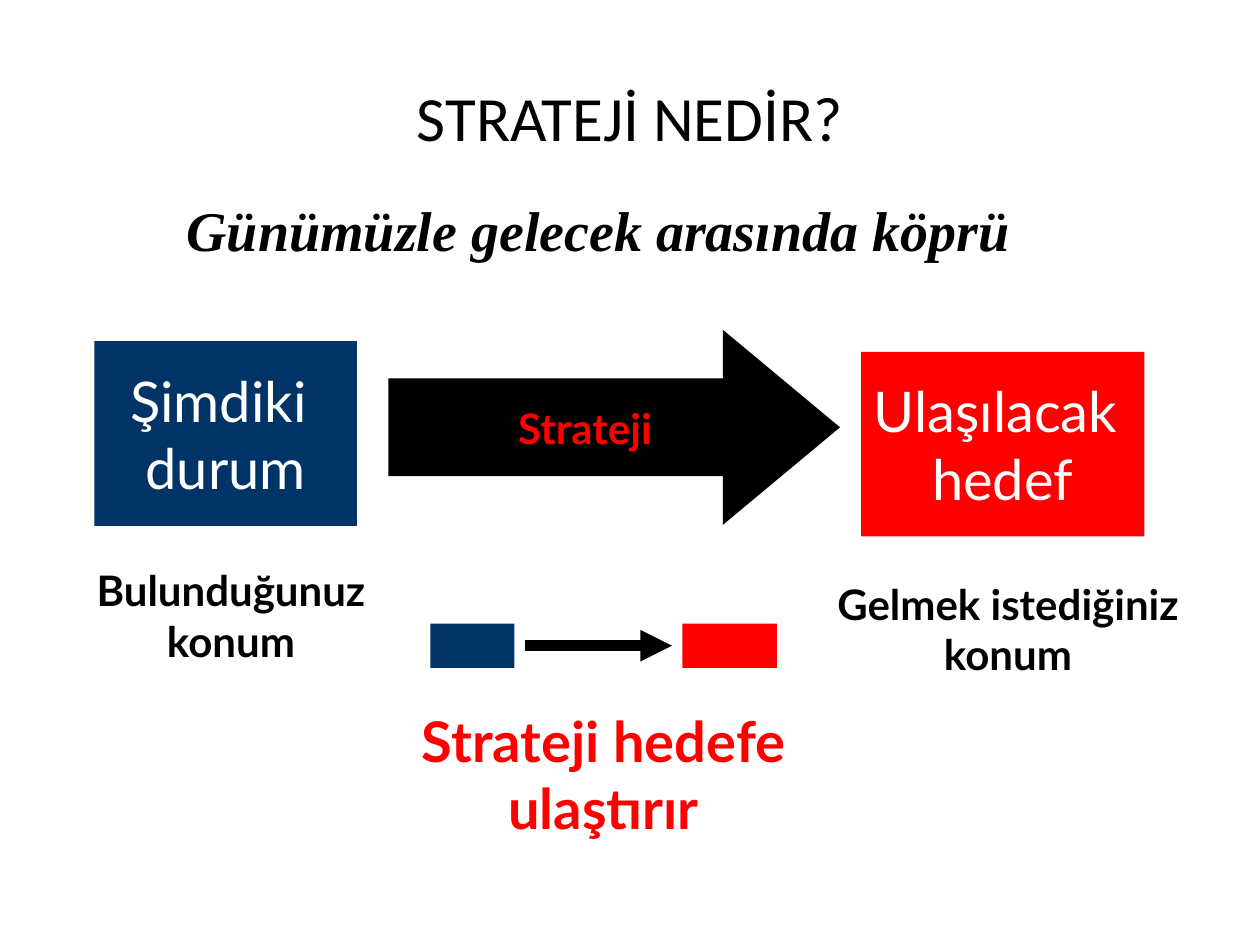
from dataclasses import dataclass

from lxml import etree
from pptx import Presentation
from pptx.dml.color import RGBColor
from pptx.enum.shapes import MSO_CONNECTOR, MSO_SHAPE
from pptx.enum.text import MSO_ANCHOR, PP_ALIGN
from pptx.oxml.ns import qn
from pptx.util import Emu, Inches, Pt

CENTER = PP_ALIGN.CENTER
TOP, MIDDLE = MSO_ANCHOR.TOP, MSO_ANCHOR.MIDDLE
RECTANGLE, RIGHT_ARROW = MSO_SHAPE.RECTANGLE, MSO_SHAPE.RIGHT_ARROW
STRAIGHT = MSO_CONNECTOR.STRAIGHT
WIDTH, HEIGHT = Inches(10), Inches(7.5)
COLUMNS = 120  # square grid cells, 12 to the inch
COLORS = {"ink": "000000", "paper": "FFFFFF", "now": "003366", "goal": "FF0000"}


@dataclass(frozen=True)
class Place:
    """Left, top, width and height in grid cells."""
    left: float
    top: float
    width: float
    height: float


@dataclass(frozen=True)
class Style:
    size: int
    color: str
    font: str = "Lato"
    bold: bool = False
    italic: bool = False


@dataclass(frozen=True)
class Label:
    place: Place
    text: str
    style: Style


@dataclass(frozen=True)
class Block:
    place: Place
    fill: str
    lines: tuple[str, ...] = ()
    style: Style | None = None
    preset: int = RECTANGLE


TITLE = Style(36, "ink", "Calibri")
SUBTITLE = Style(32, "ink", "Times New Roman", bold=True, italic=True)
CAPTION = Style(24, "ink", bold=True)
CONCLUSION = Style(32, "goal", bold=True)
STATE = Style(32, "paper")
STRATEGY = Style(24, "goal", bold=True)

LABELS = (
    Label(Place(6, 18, 102, 63.7), "Günümüzle gelecek arasında köprü", SUBTITLE),
    Label(Place(77, 54.5, 38, 10.8), "Gelmek istediğiniz konum", CAPTION),
    Label(Place(33, 66.7, 49, 14), "Strateji hedefe ulaştırır", CONCLUSION),
    Label(Place(7, 53.2, 30, 10.8), "Bulunduğunuz konum", CAPTION),
)
BLOCKS = (
    Block(Place(9, 32.5, 25, 17.6), "now", ("Şimdiki ", "durum"), STATE),
    Block(Place(82, 33.5, 27, 17.6), "goal", ("Ulaşılacak ", "hedef"), STATE),
    Block(Place(37, 31.4, 43, 18.6), "ink", ("Strateji",), STRATEGY, RIGHT_ARROW),
    Block(Place(41, 59.4, 8, 4.2), "now"),
    Block(Place(65, 59.4, 9, 4.2), "goal"),
)


def cells(count: float) -> Emu:
    return Emu(round(WIDTH * count / COLUMNS))


def bounds(place: Place) -> tuple[Emu, ...]:
    return tuple(map(cells, (place.left, place.top, place.width, place.height)))


def color(name: str) -> RGBColor:
    return RGBColor.from_string(COLORS[name])


def write(frame, lines: tuple[str, ...], style: Style, anchor, wrap: bool) -> None:
    frame.word_wrap = wrap
    frame.vertical_anchor = anchor
    for number, line in enumerate(lines):
        para = frame.add_paragraph() if number else frame.paragraphs[0]
        para.alignment = CENTER
        span = para.add_run()
        span.text = line
        font = span.font
        font.name, font.size = style.font, Pt(style.size)
        font.bold, font.italic = style.bold, style.italic
        font.color.rgb = color(style.color)


def add_title(page, text: str, place: Place) -> None:
    title = page.shapes.title
    title.left, title.top, title.width, title.height = bounds(place)
    write(title.text_frame, (text,), TITLE, MIDDLE, True)


def add_label(page, label: Label) -> None:
    box = page.shapes.add_textbox(*bounds(label.place))
    write(box.text_frame, (label.text,), label.style, TOP, True)


def add_block(page, block: Block) -> None:
    shape = page.shapes.add_shape(block.preset, *bounds(block.place))
    shape.shadow.inherit = False
    shape.fill.solid()
    shape.fill.fore_color.rgb = color(block.fill)
    shape.line.fill.background()
    if block.preset == RIGHT_ARROW:
        shape.adjustments[0], shape.adjustments[1] = 0.5, 0.6
    if block.style:
        write(shape.text_frame, block.lines, block.style, MIDDLE, False)


def add_arrow(page, start: float, end: float, row: float) -> None:
    arrow = page.shapes.add_connector(
        STRAIGHT, cells(start), cells(row), cells(end), cells(row))
    arrow.line.color.rgb = color("ink")
    arrow.line.width = Pt(6)
    outline = arrow.line._get_or_add_ln()
    etree.SubElement(outline, qn("a:tailEnd"), type="triangle")
    etree.SubElement(arrow._element.spPr, qn("a:effectLst"))


def main() -> None:
    deck = Presentation()
    deck.slide_width, deck.slide_height = WIDTH, HEIGHT
    page = deck.slides.add_slide(deck.slide_layouts.get_by_name("Title Only"))
    add_title(page, "STRATEJİ NEDİR?", Place(6, 3.6, 108, 15))
    for label in LABELS:
        add_label(page, label)
    for block in BLOCKS:
        add_block(page, block)
    add_arrow(page, 50, 64, 61.5)
    deck.save("out.pptx")


if __name__ == "__main__":
    main()
